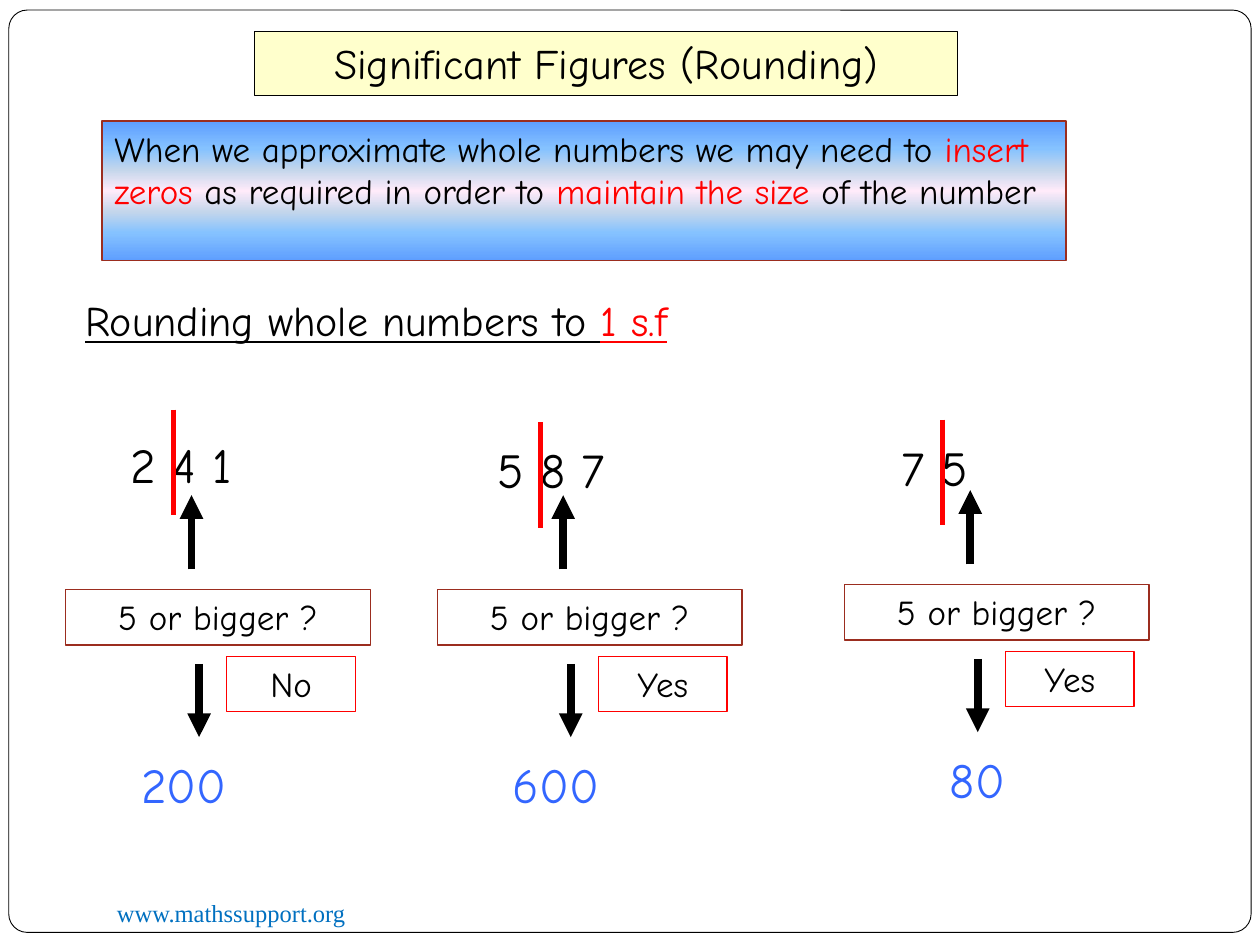
from typing import NamedTuple

from lxml.etree import SubElement
from pptx import Presentation
from pptx.dml.color import RGBColor
from pptx.enum.shapes import MSO_CONNECTOR, MSO_SHAPE
from pptx.enum.text import MSO_ANCHOR, PP_ALIGN
from pptx.oxml.ns import qn
from pptx.util import Inches, Pt

COLORS = {
    "black": "000000", "white": "FFFFFF", "cream": "FFFFCC", "red": "FF0000",
    "brown": "9B2D1F", "blue": "3366FF", "link": "0070C0",
}
GRADIENT = [(0, "5E9EFF"), (20, "85C2FF"), (35, "C4D6EB"), (50, "FFEBFA"),
            (65, "C4D6EB"), (80, "85C2FF"), (100, "5E9EFF")]
FONT = "Comic Neue"


class Run(NamedTuple):
    text: str
    color: str = "black"


class Example(NamedTuple):
    left: float
    dy: float
    digits: str
    digits_at: tuple[float, float]
    bar_at: tuple[float, float]
    reply: str
    result: str
    indent: float


EXAMPLES = [
    Example(0.52, 0, "2 4 1", (0.94, 3.4), (1.38, 3.25), "No", "200", 0.12),
    Example(3.47, 0, "5 8 7", (3.85, 3.44), (4.29, 3.35), "Yes", "600", 0.12),
    Example(6.7, -0.04, "7 5", (7.06, 3.42), (7.48, 3.33), "Yes", "80", 0.36),
]


def rgb(name: str) -> RGBColor:
    """Look up a named colour."""
    return RGBColor.from_string(COLORS[name])


def write(sp, runs: list[Run], size: float, align=PP_ALIGN.LEFT, font: str = FONT,
          underline: bool = False, indent: float = 0) -> None:
    """Fill a shape with one paragraph of runs."""
    tf = sp.text_frame
    tf.word_wrap = True
    tf.vertical_anchor = MSO_ANCHOR.TOP
    tf.margin_left = Inches(0.1 + indent)
    p = tf.paragraphs[0]
    p.alignment = align
    for run in runs:
        r = p.add_run()
        r.text = run.text
        r.font.name, r.font.size = font, Pt(size)
        r.font.color.rgb = rgb(run.color)
        if underline:
            r.font.underline = True


def add_text(s, at: tuple, runs: list[Run], size: float, **style) -> None:
    """Add a text box."""
    write(s.shapes.add_textbox(*map(Inches, at)), runs, size, **style)


def add_box(s, at: tuple, line: str, fill: str | None = None, width: float = 0.75,
            kind=MSO_SHAPE.RECTANGLE):
    """Add an outlined shape."""
    sp = s.shapes.add_shape(kind, *map(Inches, at))
    sp.shadow.inherit = False
    sp.line.color.rgb = rgb(line)
    sp.line.width = Pt(width)
    if fill:
        sp.fill.solid()
        sp.fill.fore_color.rgb = rgb(fill)
    else:
        sp.fill.background()
    return sp


def add_label(s, at: tuple, text: str, line: str, size: float = 20,
              fill: str | None = None) -> None:
    """Add an outlined box with centred text."""
    write(add_box(s, at, line, fill), [Run(text)], size, PP_ALIGN.CENTER)


def add_line(s, x: float, y1: float, y2: float, color: str, width: float,
             arrow: bool = False) -> None:
    """Add a vertical line, with an arrowhead at its end if asked."""
    ln = s.shapes.add_connector(MSO_CONNECTOR.STRAIGHT, *map(Inches, (x, y1, x, y2)))
    ln.line.color.rgb = rgb(color)
    ln.line.width = Pt(width)
    if arrow:
        SubElement(ln.line._get_or_add_ln(), qn("a:tailEnd"), type="triangle")
    SubElement(ln._element.spPr, qn("a:effectLst"))


def set_gradient(sp) -> None:
    """Fill a shape with the vertical multi-stop gradient."""
    sp.fill.gradient()
    sp.fill.gradient_angle = 90
    stops = sp._element.spPr.find(qn("a:gradFill")).find(qn("a:gsLst"))
    for gs in list(stops):
        stops.remove(gs)
    for pos, color in GRADIENT:
        gs = SubElement(stops, qn("a:gs"), pos=str(pos * 1000))
        SubElement(gs, qn("a:srgbClr"), val=color)


def add_example(s, ex: Example) -> None:
    """Draw one rounding example from its digits down to its result."""
    x, dy = ex.left, ex.dy
    add_text(s, (*ex.digits_at, 2.42, 0.57), [Run(ex.digits)], 28)
    bar_x, bar_y = ex.bar_at
    add_line(s, bar_x, bar_y, bar_y + 0.84, "red", 3)
    add_label(s, (x, 4.68 + dy, 2.42, 0.44), "5 or bigger ?", "brown")
    add_line(s, x + 1, 4.52 + dy, 3.93 + dy, "black", 4.5, arrow=True)
    add_line(s, x + 1.06, 5.27 + dy, 5.85 + dy, "black", 4.5, arrow=True)
    add_text(s, (x + 0.38, 5.94 + dy, 2.1, 0.57), [Run(ex.result, "blue")], 28,
             indent=ex.indent)
    add_label(s, (x + 1.28, 5.21 + dy, 1.02, 0.44), ex.reply, "red")


def main() -> None:
    """Build the slide and save it."""
    prs = Presentation()
    prs.slide_width, prs.slide_height = Inches(10), Inches(7.5)
    s = prs.slides.add_slide(prs.slide_layouts[6])

    frame = add_box(s, (0.07, 0.08, 9.86, 7.32), "black", "white", 0.5,
                    MSO_SHAPE.ROUNDED_RECTANGLE)
    frame.adjustments[0] = 0.02
    add_text(s, (0.83, 7.08, 3.25, 0.34), [Run("www.mathssupport.org", "link")], 14,
             font="Times New Roman")
    add_label(s, (2.02, 0.25, 5.58, 0.51), "Significant Figures (Rounding)", "black",
              24, "cream")

    rule = add_box(s, (0.81, 0.96, 7.65, 1.11), "brown")
    set_gradient(rule)
    write(rule, [
        Run("When we approximate whole numbers we may need to "),
        Run("insert zeros", "red"),
        Run(" as required in order to "),
        Run("maintain the size", "red"),
        Run(" of the number"),
    ], 20)
    add_text(s, (0.58, 2.29, 5.52, 0.5),
             [Run("Rounding whole numbers to "), Run("1 s.f", "red")], 24,
             underline=True)

    for ex in EXAMPLES:
        add_example(s, ex)
    prs.save("out.pptx")


if __name__ == "__main__":
    main()
